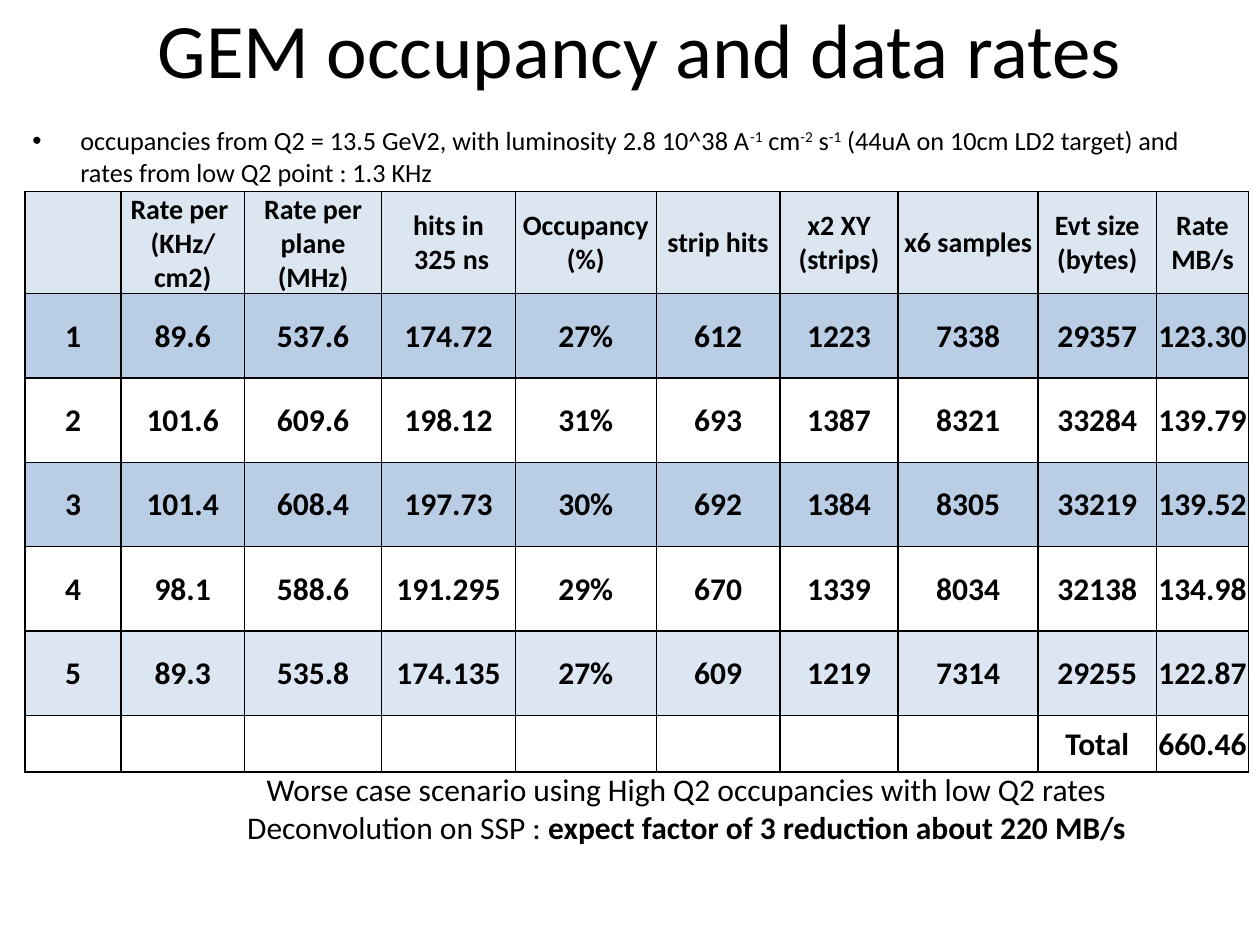
"""Build the slide on GEM occupancy and data rates."""
from lxml.etree import SubElement
from pptx import Presentation
from pptx.dml.color import RGBColor
from pptx.enum.text import MSO_ANCHOR as Anchor, PP_ALIGN as Align
from pptx.oxml import parse_xml
from pptx.oxml.ns import nsdecls, qn
from pptx.util import Inches, Pt


def color(value):
    return RGBColor.from_string(value)


def format_text(frame, size, align, bold=False):
    for para in frame.paragraphs:
        para.alignment = align
        for span in para.runs:
            span.font.name = "Calibri"
            span.font.size = Pt(size)
            span.font.bold = bold
            span.font.color.rgb = color("000000")


deck = Presentation()
deck.slide_width, deck.slide_height = Inches(10), Inches(7.5)
page = deck.slides.add_slide(deck.slide_layouts[6])

title = page.shapes.add_textbox(Inches(0.58), Inches(-0.25), Inches(9), Inches(1.25)).text_frame
title.word_wrap = True
title.vertical_anchor = Anchor.MIDDLE
title.text = "GEM occupancy and data rates"
format_text(title, 44, Align.CENTER)

conditions = page.shapes.add_textbox(Inches(0.16), Inches(0.94), Inches(9.53), Inches(3.57)).text_frame
conditions.word_wrap = True
para = conditions.paragraphs[0]
para.space_before = Pt(3)
pieces = [
    "occupancies from Q2 = 13.5 GeV2, with luminosity 2.8 10^38 A", "-1",
    " cm", "-2", " s", "-1",
    " (44uA on 10cm LD2 target) and rates from low Q2 point : 1.3 KHz",
]
for index, piece in enumerate(pieces):
    span = para.add_run()
    span.text = piece
    if index % 2:
        span.font._element.set("baseline", "30000")
format_text(conditions, 15, Align.LEFT)
properties = para._p.get_or_add_pPr()
properties.set("marL", str(Inches(0.38)))
properties.set("indent", str(Inches(-0.38)))
SubElement(properties, qn("a:buFont")).set("typeface", "Arial")
SubElement(properties, qn("a:buChar")).set("char", "•")

rows = [
    ["", "Rate per \n(KHz/cm2)", "Rate per plane\n(MHz)", "hits in\n 325 ns", "Occupancy\n(%)",
     "strip hits", "x2 XY\n(strips)", "x6 samples", "Evt size\n(bytes)", "Rate MB/s"],
    ["1", "89.6", "537.6", "174.72", "27%", "612", "1223", "7338", "29357", "123.30"],
    ["2", "101.6", "609.6", "198.12", "31%", "693", "1387", "8321", "33284", "139.79"],
    ["3", "101.4", "608.4", "197.73", "30%", "692", "1384", "8305", "33219", "139.52"],
    ["4", "98.1", "588.6", "191.295", "29%", "670", "1339", "8034", "32138", "134.98"],
    ["5", "89.3", "535.8", "174.135", "27%", "609", "1219", "7314", "29255", "122.87"],
    [""] * 8 + ["Total", "660.46"],
]
row_fills = ["DCE6F1", "B9CDE5", "FFFFFF", "B9CDE5", "FFFFFF", "DCE6F2", "FFFFFF"]
row_heights = [0.67] * 6 + [0.45]
column_widths = [0.76, 0.98, 1.09, 1.06, 1.12, 0.98, 0.94, 1.11, 0.94, 0.73]

table = page.shapes.add_table(
    len(rows), len(column_widths), Inches(0.2), Inches(1.52), Inches(9.71), Inches(4.47)
).table
for column, width in zip(table.columns, column_widths):
    column.width = Inches(width)
for r, (values, fill, height) in enumerate(zip(rows, row_fills, row_heights)):
    table.rows[r].height = Inches(height)
    for c, value in enumerate(values):
        cell = table.cell(r, c)
        cell.margin_left = cell.margin_right = cell.margin_top = Inches(0.01)
        cell.margin_bottom = 0
        cell.vertical_anchor = Anchor.MIDDLE
        for side in ("lnL", "lnR", "lnT", "lnB"):
            cell._tc.get_or_add_tcPr().append(parse_xml(
                f'<a:{side} {nsdecls("a")} w="12700"><a:solidFill>'
                f'<a:srgbClr val="000000"/></a:solidFill></a:{side}>'
            ))
        cell.fill.solid()
        cell.fill.fore_color.rgb = color(fill)
        if value:
            cell.text_frame.text = value
            format_text(cell.text_frame, 18 if r else 16, Align.CENTER, True)

summary = page.shapes.add_textbox(Inches(1.7), Inches(6.06), Inches(7.5), Inches(0.71)).text_frame
summary.word_wrap = True
summary.text = (
    "Worse case scenario using High Q2 occupancies with low Q2 rates\n"
    "Deconvolution on SSP : "
)
estimate = summary.paragraphs[1].add_run()
estimate.text = "expect factor of 3 reduction about 220 MB/s"
format_text(summary, 18, Align.CENTER)
estimate.font.bold = True

deck.save("out.pptx")
